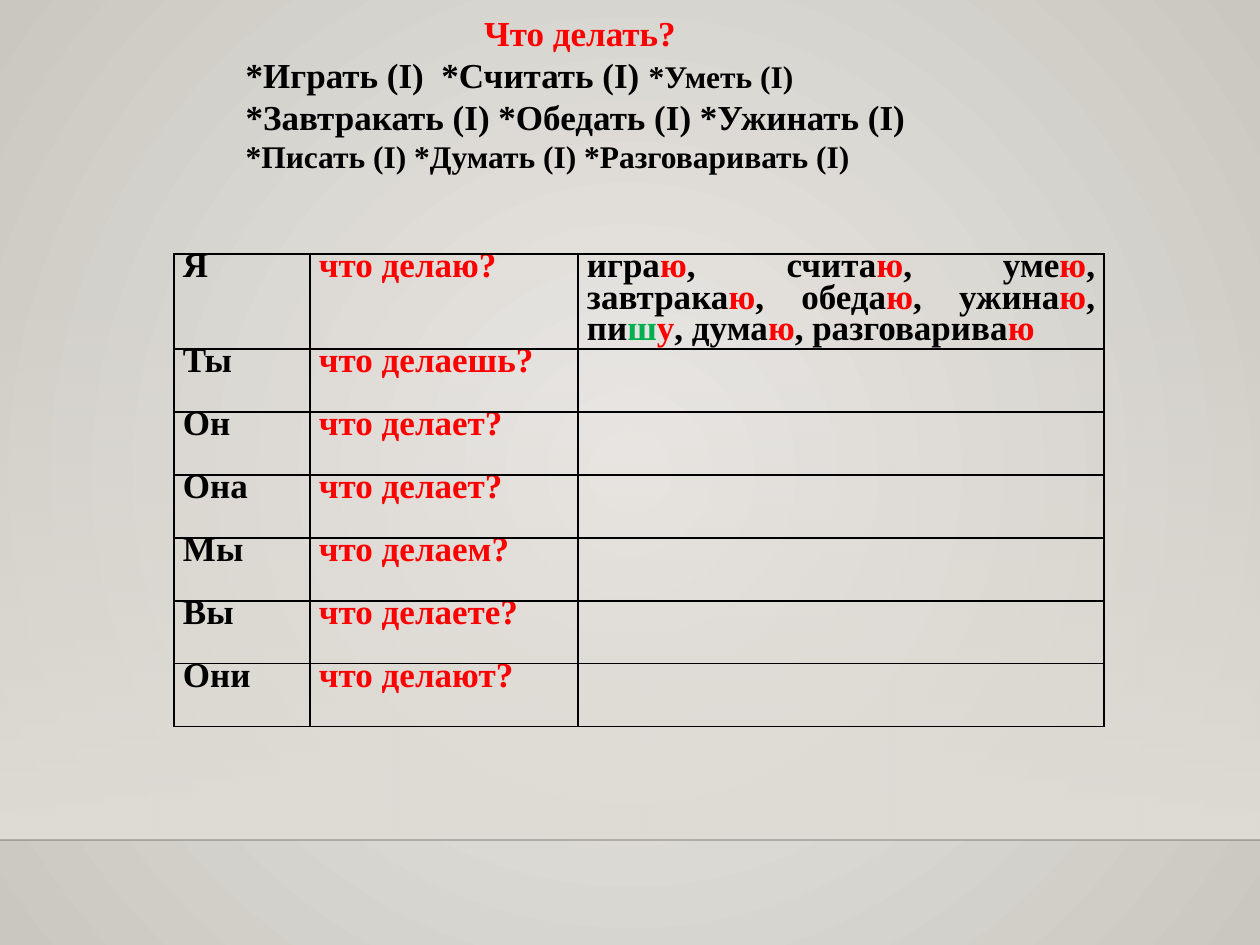
from lxml import etree
from pptx import Presentation
from pptx.dml.color import RGBColor
from pptx.enum.shapes import MSO_CONNECTOR, MSO_SHAPE
from pptx.enum.text import MSO_ANCHOR, MSO_AUTO_SIZE, PP_ALIGN
from pptx.oxml.ns import qn
from pptx.util import Emu, Pt

CENTER, LEFT, JUSTIFY = PP_ALIGN.CENTER, PP_ALIGN.LEFT, PP_ALIGN.JUSTIFY
TOP, NO_FIT = MSO_ANCHOR.TOP, MSO_AUTO_SIZE.NONE
RECT, STRAIGHT = MSO_SHAPE.RECTANGLE, MSO_CONNECTOR.STRAIGHT
SCALE = 914400 // 126
FONT = "Times New Roman"
COLORS = {
    "black": "000000", "red": "FF0000", "green": "00B050",
    "light": "ECEAE7", "dark": "CAC7C1", "floor": "DFDBD5", "edge": "000001",
}
HEADING = [
    (CENTER, [("Что делать?", "red", 20)]),
    (LEFT, [("*Играть (I)  *Считать (I) ", "black", 20),
            ("*Уметь (I) ", "black", 18),
            ("*Завтракать (I) *Обедать (I) *Ужинать (I)", "black", 20)]),
    (LEFT, [("*Писать (I) *Думать (I) *Разговаривать (I)", "black", 18)]),
]
FORMS = [
    ("Я", "что делаю?"), ("Ты", "что делаешь?"), ("Он", "что делает?"),
    ("Она", "что делает?"), ("Мы", "что делаем?"), ("Вы", "что делаете?"),
    ("Они", "что делают?"),
]
STEMS = ["игра", ", счита", ", уме", ", завтрака", ", обеда", ", ужина",
         ", пи", ", дума", ", разговарива"]
ENDINGS = {", пи": [("ш", "green"), ("у", "red")]}
COLUMNS = [136, 268, 526]
ROWS = [95] + [63] * 6


def px(n):
    """Turn pixels into EMU."""
    return Emu(n * SCALE)


def rgb(name):
    """Look up a named colour."""
    return RGBColor.from_string(COLORS[name])


def add_run(p, text, color="black", size=20):
    """Append a bold run to a paragraph."""
    r = p.add_run()
    r.text = text
    r.font.name, r.font.size, r.font.bold = FONT, Pt(size), True
    r.font.color.rgb = rgb(color)


def set_alpha(clr, percent):
    """Give a colour element an opacity."""
    etree.SubElement(clr, qn("a:alpha"), val=str(percent * 1000))


def set_gradient(fill, first, last):
    """Apply a two-stop gradient."""
    fill.gradient()
    for stop, name, position in zip(fill.gradient_stops, (first, last), (0, 1)):
        stop.color.rgb = rgb(name)
        stop.position = position


def add_background(s):
    """Fill the slide from its centre outwards."""
    set_gradient(s.background.fill, "light", "dark")
    lin = next(s.element.iter(qn("a:lin")))
    circle = etree.Element(qn("a:path"), path="circle")
    etree.SubElement(circle, qn("a:fillToRect"), l="50000", t="50000", r="50000", b="50000")
    lin.getparent().replace(lin, circle)


def add_fade(s):
    """Draw the band that fades in towards the floor line."""
    sp = s.shapes.add_shape(RECT, px(0), px(277), px(1260), px(563))
    sp.shadow.inherit = False
    sp.line.fill.background()
    set_gradient(sp.fill, "floor", "floor")
    sp.fill.gradient_angle = 270
    set_alpha(next(sp.element.iter(qn("a:srgbClr"))), 0)


def add_floor_line(s):
    """Draw the faint line across the slide."""
    line = s.shapes.add_connector(STRAIGHT, px(0), px(840), px(1260), px(840))
    line.line.width = Pt(1)
    line.line.color.rgb = rgb("edge")
    set_alpha(next(line.element.iter(qn("a:srgbClr"))), 20)
    etree.SubElement(line.element.spPr, qn("a:effectLst"))


def add_heading(s):
    """Place the question and its verbs in the title."""
    sp = s.shapes.title
    sp.left, sp.top, sp.width, sp.height = px(233), px(5), px(694), px(221)
    tf = sp.text_frame
    tf.word_wrap, tf.auto_size, tf.vertical_anchor = True, NO_FIT, TOP
    for i, (align, runs) in enumerate(HEADING):
        p = tf.add_paragraph() if i else tf.paragraphs[0]
        p.alignment = align
        for run in runs:
            add_run(p, *run)


def add_borders(cell):
    """Draw black lines on the four sides of a cell."""
    tc_pr = cell._tc.get_or_add_tcPr()
    for i, side in enumerate(("a:lnL", "a:lnR", "a:lnT", "a:lnB")):
        ln = etree.Element(qn(side), w=str(Pt(1)))
        fill = etree.SubElement(ln, qn("a:solidFill"))
        etree.SubElement(fill, qn("a:srgbClr"), val=COLORS["black"])
        tc_pr.insert(i, ln)


def fill_cell(cell, runs):
    """Format a cell and write its runs."""
    cell.margin_left = cell.margin_right = px(9)
    cell.margin_top = cell.margin_bottom = 0
    cell.fill.background()
    add_borders(cell)
    p = cell.text_frame.paragraphs[0]
    p.alignment, p.line_spacing = JUSTIFY, Pt(18)
    for run in runs:
        add_run(p, *run)


def add_conjugation(s):
    """Build the conjugation table."""
    table = s.shapes.add_table(len(ROWS), len(COLUMNS), px(174), px(254),
                               px(sum(COLUMNS)), px(sum(ROWS))).table
    table.first_row = table.horz_banding = False
    for column, width in zip(table.columns, COLUMNS):
        column.width = px(width)
    examples = []
    for stem in STEMS:
        examples += [(stem, "black"), *ENDINGS.get(stem, [("ю", "red")])]
    for i, (pronoun, question) in enumerate(FORMS):
        table.rows[i].height = px(ROWS[i])
        contents = [[(pronoun,)], [(question, "red")], [] if i else examples]
        for j, runs in enumerate(contents):
            fill_cell(table.cell(i, j), runs)


def main():
    """Build and save the slide."""
    prs = Presentation()
    prs.slide_width, prs.slide_height = px(1260), px(945)
    s = prs.slides.add_slide(prs.slide_layouts[5])
    add_background(s)
    add_fade(s)
    add_floor_line(s)
    add_conjugation(s)
    add_heading(s)
    prs.save("out.pptx")


if __name__ == "__main__":
    main()
